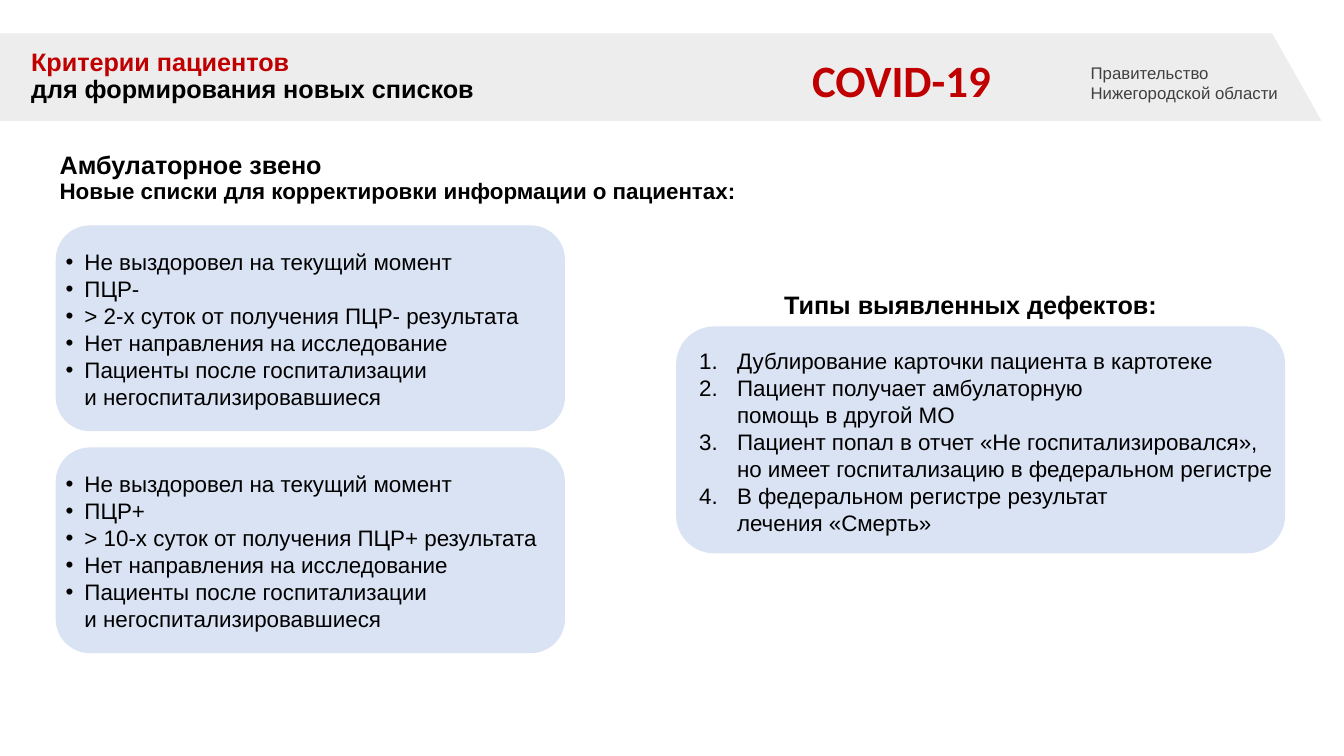
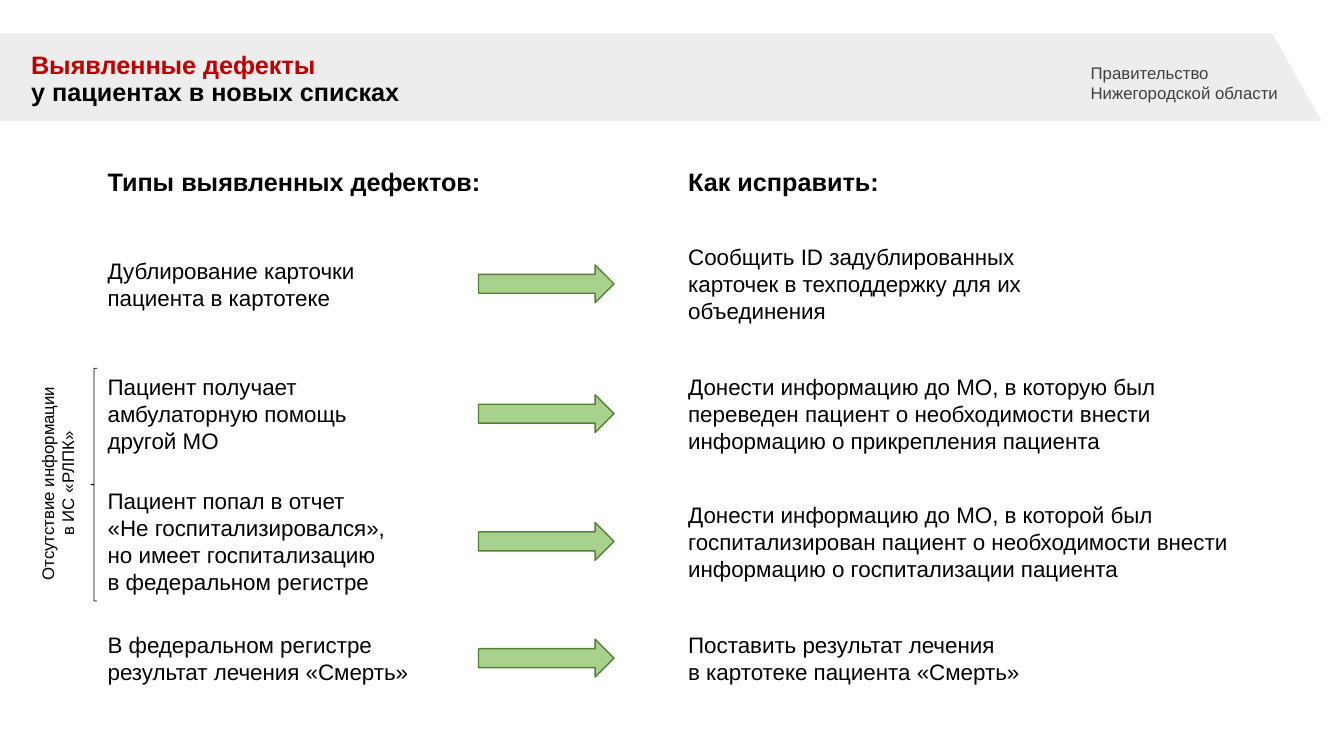
import copy
import dataclasses
import pptx
import pptx.dml.color
import pptx.enum.dml
import pptx.enum.shapes
import pptx.enum.text
import pptx.oxml
import pptx.oxml.ns
import pptx.util

Pt = pptx.util.Pt
qn = pptx.oxml.ns.qn
Shape = pptx.enum.shapes.MSO_SHAPE
Align = pptx.enum.text.PP_ALIGN


@dataclasses.dataclass(frozen=True)
class Theme:
    font: str = "Arial"
    logo: str = "Calibri"
    ink: str = "000000"
    red: str = "C00000"
    grey: str = "404040"
    band: str = "D9D9D9"
    card: str = "DAE3F3"
    green: str = "A9D18E"
    edge: str = "548235"
    small: int = 12
    body: int = 16
    head: int = 18
    big: int = 32


T = Theme()
WIDE, HIGH = 960, 540
BAND = (0, 23.8, 944, 62.6)
LINE, PAD = 19.4, 7.2


def rgb(code):
    return pptx.dml.color.RGBColor.from_string(code)


def pts(box):
    return [Pt(v) for v in box]


def style(para, size, tone=T.ink, bold=False, font=T.font):
    for run in para.runs:
        run.font.name = font
        run.font.size = Pt(size)
        run.font.bold = bold
        run.font.color.rgb = rgb(tone)
    for gap in para._p.findall(qn("a:br")):
        gap.insert(0, copy.deepcopy(gap.getprevious().get_or_add_rPr()))


def label(slide, box, text, size=T.body, space=None, align=Align.LEFT, **look):
    shape = slide.shapes.add_textbox(*pts(box))
    shape.text_frame.word_wrap = True
    para = shape.text_frame.paragraphs[0]
    para.text = text
    para.alignment = align
    if space:
        para.line_spacing = space
    style(para, size, **look)
    return shape


def heading(slide, box, text):
    return label(slide, box, text, T.head, space=0.9, bold=True)


def form(slide, kind, box, fill=None, edge=None, width=1):
    shape = slide.shapes.add_shape(kind, *pts(box))
    shape.shadow.inherit = False
    if fill:
        shape.fill.solid()
        shape.fill.fore_color.rgb = rgb(fill)
    else:
        shape.fill.background()
    if edge:
        shape.line.color.rgb = rgb(edge)
        shape.line.width = Pt(width)
    else:
        shape.line.fill.background()
    return shape


def header(slide, box, title, top):
    x, y, w, h = box
    path = slide.shapes.build_freeform(Pt(x), Pt(y))
    path.add_line_segments(
        [(Pt(x + w - 35.3), Pt(y)), (Pt(x + w), Pt(y + h)), (Pt(x), Pt(y + h))])
    band = path.convert_to_shape()
    band.shadow.inherit = False
    band.fill.solid()
    band.fill.fore_color.rgb = rgb(T.band)
    band.line.fill.background()
    tint = band.element.find(".//" + qn("a:srgbClr"))
    pptx.oxml.ns  # noqa
    alpha = tint.makeelement(qn("a:alpha"), {"val": "45000"})
    tint.append(alpha)

    head = slide.shapes.title
    head.element.addprevious(band.element)
    head.left, head.top, head.width, head.height = pts((x + 15, top, 500, 46.8))
    frame = head.text_frame
    frame.word_wrap = True
    frame.auto_size = pptx.enum.text.MSO_AUTO_SIZE.NONE
    frame.vertical_anchor = pptx.enum.text.MSO_ANCHOR.TOP
    para = frame.paragraphs[0]
    para.text = title
    para.alignment = Align.LEFT
    para.line_spacing = 0.9
    style(para, T.head, bold=True)
    para.runs[0].font.color.rgb = rgb(T.red)
    label(slide, (x + w - 172, y + 17.2, 153.4, 35.3),
          "Правительство Нижегородской области", T.small, tone=T.grey)


def items(slide, box, lines, indent, tag, **attrs):
    shape = slide.shapes.add_textbox(*pts(box))
    frame = shape.text_frame
    frame.word_wrap = True
    for i, line in enumerate(lines):
        para = frame.add_paragraph() if i else frame.paragraphs[0]
        para.text = line
        props = para._p.get_or_add_pPr()
        props.set("marL", str(Pt(indent)))
        props.set("indent", str(-Pt(indent)))
        if tag == "a:buChar":
            props.append(props.makeelement(qn("a:buFont"), {"typeface": T.font}))
        props.append(props.makeelement(qn(tag), attrs))
        style(para, T.body)


def group(slide, box, test, days):
    x, y, w, h = box
    form(slide, Shape.ROUNDED_RECTANGLE, box, T.card)
    lines = [
        "Не выздоровел на текущий момент",
        f"ПЦР{test}",
        f"> {days}-х суток от получения ПЦР{test} результата",
        "Нет направления на исследование",
        "Пациенты после госпитализации\vи негоспитализировавшиеся",
    ]
    items(slide, (x, y + 13, w, h - 23), lines, 13.5, "a:buChar", char="•")


def faults(slide, box):
    x, y, w, h = box
    heading(slide, (x + 70, y - 27.4, 295, 26.6), "Типы выявленных дефектов:")
    form(slide, Shape.ROUNDED_RECTANGLE, box, T.card)
    lines = [
        "Дублирование карточки пациента в картотеке",
        "Пациент получает амбулаторную\vпомощь в другой МО",
        "Пациент попал в отчет «Не госпитализировался»,\v"
        "но имеет госпитализацию в федеральном регистре",
        "В федеральном регистре результат\vлечения «Смерть»",
    ]
    items(slide, (x + 9.4, y + 11.5, w, h - 19), lines, 27,
          "a:buAutoNum", type="arabicPeriod")


def lists(slide):
    header(slide, BAND, "Критерии пациентов\vдля формирования новых списков", 31.7)
    label(slide, (573, 33.8, 150, 46), "COVID-19", T.big,
          tone=T.red, bold=True, font=T.logo)
    intro = heading(
        slide, (35.5, 105.8, 508, 44.6),
        "Амбулаторное звено\vНовые списки для корректировки информации о пациентах:")
    intro.text_frame.paragraphs[0].runs[1].font.size = Pt(T.body)
    for i, (test, days) in enumerate((("-", 2), ("+", 10))):
        group(slide, (39.8, 161 + i * 158.6, 363.8, 147), test, days)
    faults(slide, (483, 233.2, 435, 162))


def cell(slide, x, mid, w, rows, text):
    h = rows * LINE + PAD
    label(slide, (x, mid - h / 2, w, h), text)


def fix(slide, box, mid, left, right):
    x, y, w, h = box
    cell(slide, x, mid, *left)
    form(slide, Shape.RIGHT_ARROW, (x + 272, mid - 13.8, 96.8, 27),
         T.green, T.edge)
    cell(slide, x + 414.7, mid, *right)


def aside(slide, box, text):
    x, y, w, h = box
    form(slide, Shape.LEFT_BRACE, box, edge=T.ink, width=0.5)
    wide, tall = 175.7, 36
    note = label(slide, (x - 23.9 - wide / 2, y + h / 2 - 0.8 - tall / 2, wide, tall),
                 text, T.small, align=Align.CENTER)
    note.rotation = 270


def fixes(slide):
    header(slide, BAND, "Выявленные дефекты\vу пациентах в новых списках", 33.8)
    box = (69.8, 117.4, 860, 380)
    x, y, w, h = box
    heading(slide, (x, y, 295, 26.6), "Типы выявленных дефектов:")
    heading(slide, (x + 414.7, y, 290, 26.6), "Как исправить:")
    rows = [
        (203,
         (206.6, 2, "Дублирование карточки пациента в картотеке"),
         (255.6, 3, "Сообщить ID задублированных карточек в техподдержку "
                    "для их объединения")),
        (295.8,
         (206.6, 3, "Пациент получает амбулаторную помощь другой МО"),
         (410.4, 3, "Донести информацию до МО, в которую был переведен пациент "
                    "о необходимости внести информацию о прикрепления пациента")),
        (387,
         (217.4, 4, "Пациент попал в отчет\v«Не госпитализировался»,\v"
                    "но имеет госпитализацию в федеральном регистре"),
         (443.5, 3, "Донести информацию до МО, в которой был госпитализирован "
                    "пациент о необходимости внести информацию "
                    "о госпитализации пациента")),
        (470.4,
         (255.6, 2, "В федеральном регистре\vрезультат лечения «Смерть»"),
         (269.3, 2, "Поставить результат лечения\vв картотеке пациента «Смерть»")),
    ]
    for mid, left, right in rows:
        fix(slide, box, mid, left, right)
    aside(slide, (65, 263, 4.3, 166.3), "Отсутствие информации\vв ИС «РЛПК»")


def main():
    deck = pptx.Presentation()
    deck.slide_width, deck.slide_height = Pt(WIDE), Pt(HIGH)
    for build in (lists, fixes):
        build(deck.slides.add_slide(deck.slide_layouts[5]))
    deck.save("out.pptx")


if __name__ == "__main__":
    main()
